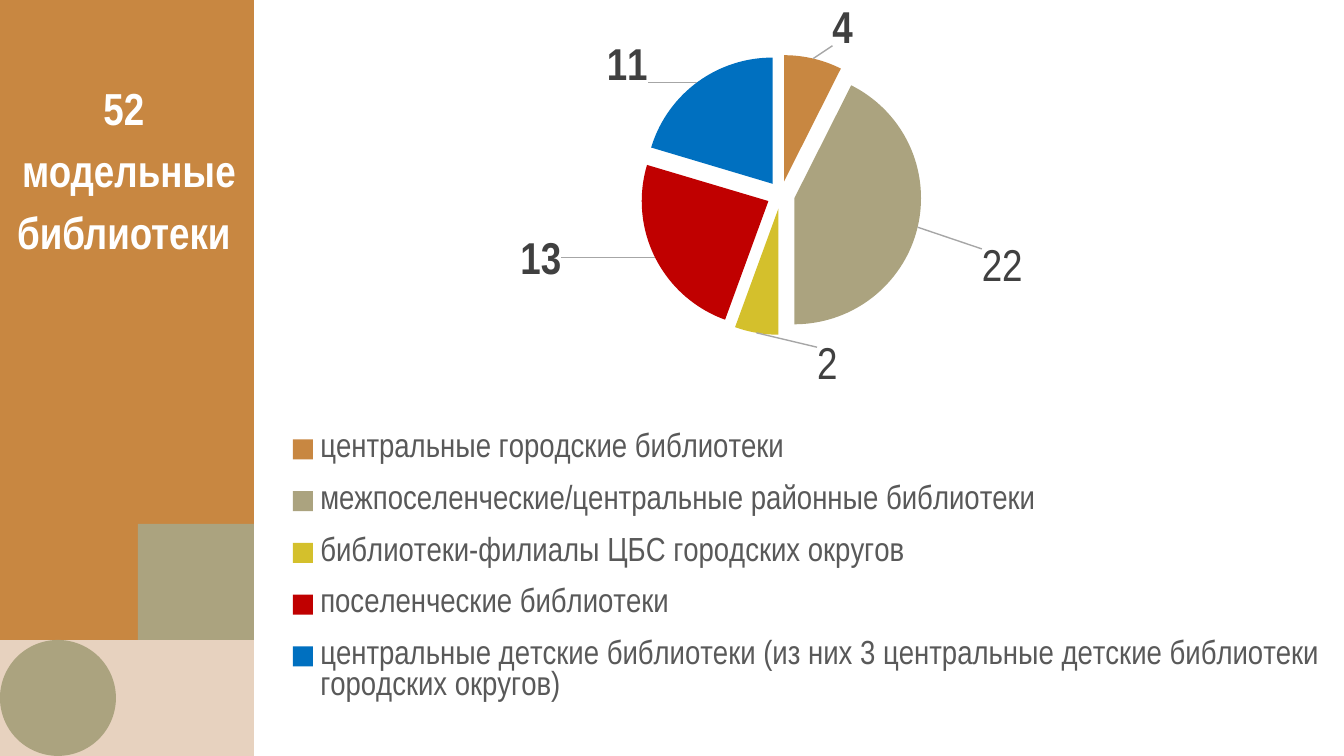
from dataclasses import dataclass
from lxml import etree
from pptx import Presentation
from pptx import util as u
from pptx.chart.data import CategoryChartData
from pptx.dml.color import RGBColor
from pptx.enum import chart as ch, shapes, text
from pptx.oxml.ns import qn

SCALE = 914400 / 134.4


@dataclass(frozen=True)
class Theme:
    base: str = "Arial"
    font: str = "Arial Narrow"
    white: str = "FFFFFF"
    sand: str = "E7D2BF"
    ochre: str = "C88741"
    olive: str = "ABA37F"
    label: str = "404040"
    key: str = "595959"
    guide: str = "A6A6A6"
    slices: tuple = ("C88741", "ABA37F", "D4C02C", "C00000", "0070C0")
    small: int = 10
    mid: int = 18
    big: int = 24


THEME = Theme()
FRAME = (258, 9, 1086, 739)
PLOT = (640, 50, 281, 287)
LEGEND = (276, 412, 1060, 312)
KINDS = [
    ("центральные городские библиотеки", 4, None, (17, -5)),
    ("межпоселенческие/центральные районные библиотеки", 23, "22", (57, 20)),
    ("библиотеки-филиалы ЦБС городских округов", 3, "2", (82, 7)),
    ("поселенческие библиотеки", 13, None, (-87, -19)),
    ("центральные детские библиотеки (из них 3 центральные детские "
     "библиотеки городских округов)", 11, None, (-44, 14)),
]


def px(n):
    return u.Emu(round(n * SCALE))


def style(font, size, color, bold=False, name=THEME.font):
    font.name = name
    font.size = u.Pt(size)
    font.bold = bold
    font.color.rgb = RGBColor.from_string(color)


def block(slide, kind, box, color):
    shape = slide.shapes.add_shape(kind, *map(px, box))
    shape.shadow.inherit = False
    shape.fill.solid()
    shape.fill.fore_color.rgb = RGBColor.from_string(color)
    shape.line.fill.background()


def heading(slide, box, lines):
    title = slide.shapes.title
    title.left, title.top, title.width, title.height = map(px, box)
    frame = title.text_frame
    frame.text = "\n".join(lines)
    frame.word_wrap = True
    frame.auto_size = text.MSO_AUTO_SIZE.NONE
    frame.vertical_anchor = text.MSO_ANCHOR.TOP
    for para in frame.paragraphs:
        para.alignment = text.PP_ALIGN.CENTER
        para.line_spacing = 1.15
        for run in para.runs:
            style(run.font, THEME.big, THEME.white, True)
    slide.shapes._spTree.append(title._element)


def layout(parts):
    node = etree.Element(qn("c:layout"))
    hold = etree.SubElement(node, qn("c:manualLayout"))
    for tag, val in parts.items():
        etree.SubElement(hold, qn("c:" + tag)).set("val", str(val))
    return node


def place(box, **extra):
    left, top, wide, high = FRAME
    x, y, w, h = box
    return layout({
        **extra, "xMode": "edge", "yMode": "edge",
        "x": round((x - left) / wide, 3), "y": round((y - top) / high, 3),
        "w": round(w / wide, 3), "h": round(h / high, 3)})


def tag(point, note, shift):
    label = point.data_label
    if note:
        label.text_frame.text = note
        run = label.text_frame.paragraphs[0].runs[0]
        style(run.font, THEME.big, THEME.label)
    else:
        style(label.font, THEME.big, THEME.label, True)
    label.position = ch.XL_LABEL_POSITION.OUTSIDE_END
    node = label._get_or_add_dLbl()
    for old in node.findall(qn("c:layout")):
        node.remove(old)
    x, y = shift
    node.find(qn("c:idx")).addnext(layout({
        "x": round(x / FRAME[2], 3), "y": round(y / FRAME[3], 3)}))


def guides(labels):
    node = labels._element
    show = node.find(qn("c:showLeaderLines"))
    if show is None:
        show = etree.SubElement(node, qn("c:showLeaderLines"))
    show.set("val", "1")
    lead = etree.Element(qn("c:leaderLines"))
    line = etree.SubElement(etree.SubElement(lead, qn("c:spPr")), qn("a:ln"))
    line.set("w", str(u.Pt(0.75)))
    fill = etree.SubElement(line, qn("a:solidFill"))
    etree.SubElement(fill, qn("a:srgbClr")).set("val", THEME.guide)
    show.addnext(lead)


def legend(chart):
    chart.has_legend = True
    key = chart.legend
    key.position = ch.XL_LEGEND_POSITION.BOTTOM
    key.include_in_layout = False
    style(key.font, THEME.mid, THEME.key)
    node = key._element
    for old in node.findall(qn("c:layout")):
        node.remove(old)
    node.find(qn("c:legendPos")).addnext(place(LEGEND))


def pie(slide):
    data = CategoryChartData()
    data.categories = [kind[0] for kind in KINDS]
    data.add_series("Series 1", [kind[1] for kind in KINDS])
    chart = slide.shapes.add_chart(
        ch.XL_CHART_TYPE.PIE, *map(px, FRAME), data).chart
    chart.has_title = False
    style(chart.font, THEME.small, "000000", name=THEME.base)
    plot = chart.plots[0]
    plot.vary_by_categories = True
    area = plot._element.getparent()
    for old in area.findall(qn("c:layout")):
        area.remove(old)
    area.insert(0, place(PLOT, layoutTarget="inner"))
    series = plot.series[0]
    labels = series.data_labels
    labels.show_value = True
    labels.position = ch.XL_LABEL_POSITION.OUTSIDE_END
    style(labels.font, THEME.big, THEME.label, True)
    guides(labels)
    for i, (_, _, note, shift) in enumerate(KINDS):
        point = series.points[i]
        point.format.fill.solid()
        point.format.fill.fore_color.rgb = RGBColor.from_string(THEME.slices[i])
        tag(point, note, shift)
    gap = etree.Element(qn("c:explosion"))
    gap.set("val", "11")
    series._element.find(qn("c:dPt")).addprevious(gap)
    legend(chart)


def main():
    deck = Presentation()
    deck.slide_width, deck.slide_height = px(1344), px(756)
    slide = deck.slides.add_slide(deck.slide_layouts[5])
    rect, oval = shapes.MSO_SHAPE.RECTANGLE, shapes.MSO_SHAPE.OVAL
    block(slide, rect, (0, 640, 254, 116), THEME.sand)
    block(slide, rect, (0, 0, 254, 640), THEME.ochre)
    block(slide, oval, (0, 640, 116, 116), THEME.olive)
    block(slide, rect, (138, 524, 116, 116), THEME.olive)
    pie(slide)
    heading(slide, (0, 66, 258, 200), ["52 ", "модельные библиотеки "])
    deck.save("out.pptx")


if __name__ == "__main__":
    main()
